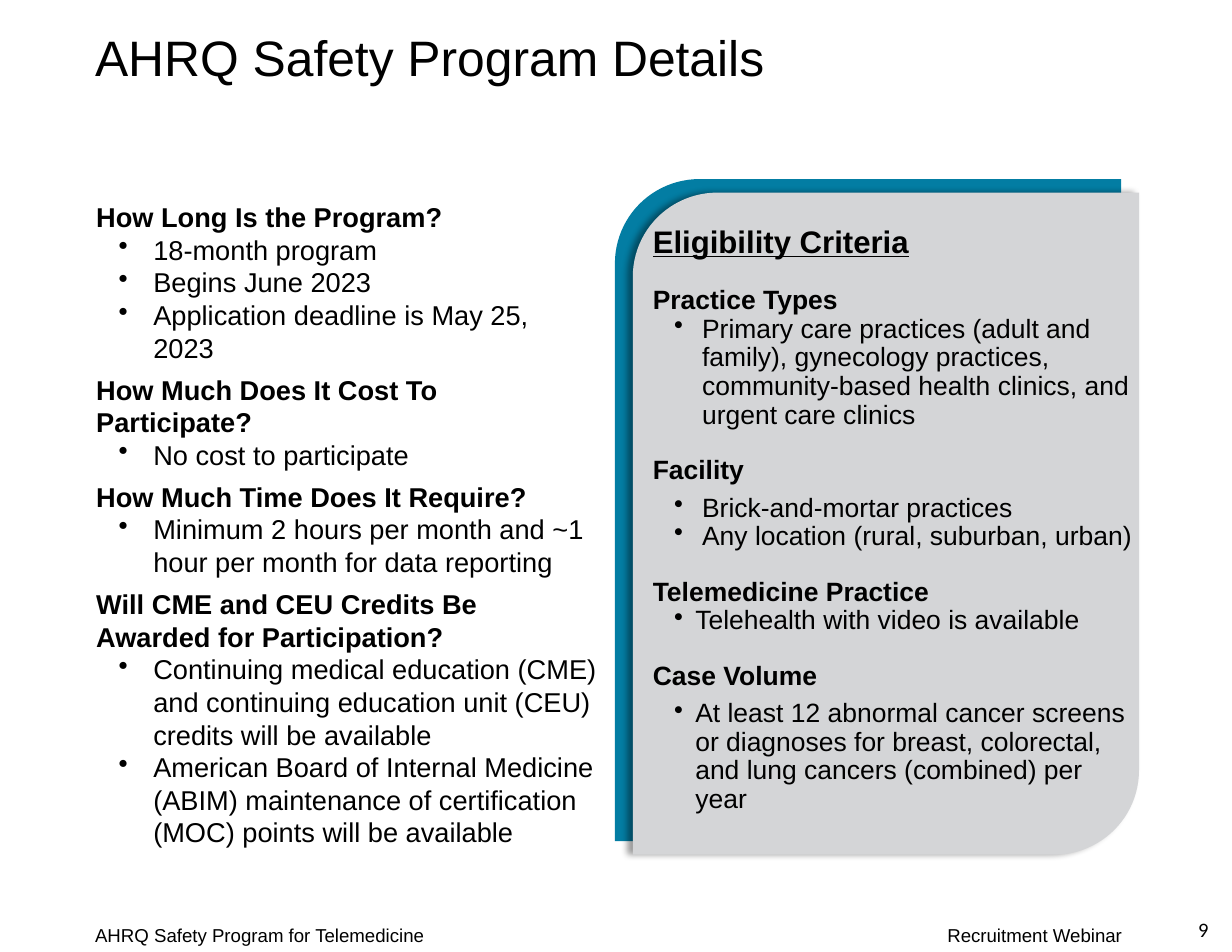
"""Build the AHRQ Safety Program Details slide."""
from lxml import etree
from pptx import Presentation
from pptx.dml.color import RGBColor
from pptx.enum.shapes import MSO_SHAPE
from pptx.enum.text import MSO_ANCHOR, PP_ALIGN
from pptx.oxml import parse_xml
from pptx.oxml.ns import nsdecls, qn
from pptx.util import Inches, Pt

CARD = MSO_SHAPE.ROUND_2_DIAG_RECTANGLE
TOP, MIDDLE = MSO_ANCHOR.TOP, MSO_ANCHOR.MIDDLE
LEFT, RIGHT = PP_ALIGN.LEFT, PP_ALIGN.RIGHT
COLORS = {"text": "000000", "teal": "037DA3", "gray": "D4D5D7", "shadow": "000000"}

presentation = Presentation()
presentation.slide_width = Inches(11)
presentation.slide_height = Inches(8.5)
slide = presentation.slides.add_slide(presentation.slide_layouts[6])


def place(left, top, width, height):
    across, down = presentation.slide_width / 100, presentation.slide_height / 100
    return int(left * across), int(top * down), int(width * across), int(height * down)


def add_text(frame, text, size, font="Arial", bold=False, underline=False, align=LEFT,
             spacing=None, before=0, after=0, margin=0, hanging=0):
    paragraph = frame.paragraphs[0]
    if paragraph.runs:
        paragraph = frame.add_paragraph()
    paragraph.alignment = align
    paragraph.line_spacing = spacing
    paragraph.space_before, paragraph.space_after = Pt(before), Pt(after)
    if margin:
        properties = paragraph._p.get_or_add_pPr()
        properties.set("marL", str(Inches(margin)))
        properties.set("indent", str(-Inches(hanging)))
        etree.SubElement(properties, qn("a:buChar")).set("char", "•")
    run = paragraph.add_run()
    run.text = text
    run.font.name, run.font.size = font, Pt(size)
    run.font.bold, run.font.underline = bold, underline
    run.font.color.rgb = RGBColor.from_string(COLORS["text"])


for left, top, color in [(49.91, 18.82, "teal"), (51.36, 20.24, "gray")]:
    card = slide.shapes.add_shape(CARD, *place(left, top, 41.09, 69.53))
    card.shadow.inherit = False
    card.fill.solid()
    card.fill.fore_color.rgb = RGBColor.from_string(COLORS[color])
    card.line.fill.background()

effects = card._element.spPr.find(qn("a:effectLst"))
effects.append(parse_xml(
    f'<a:outerShdw {nsdecls("a")} blurRad="{Pt(4)}" dist="{Pt(3)}" dir="{180 * 60000}" '
    f'algn="ctr" rotWithShape="0"><a:srgbClr val="{COLORS["shadow"]}">'
    '<a:alpha val="40000"/></a:srgbClr></a:outerShdw>'))

frames = {}
for name, bounds, anchor in [
    ("title", (6.82, 0, 86.27, 12.71), MIDDLE),
    ("details", (6.91, 20.47, 42.45, 69.53), TOP),
    ("criteria", (52.09, 23.18, 41.09, 66.82), TOP),
    ("program", (6.82, 96.47, 37.82, 3.53), TOP),
    ("event", (76, 96.47, 17.27, 3.53), TOP),
    ("number", (93.18, 95.53, 5.82, 4.24), MIDDLE),
]:
    frames[name] = slide.shapes.add_textbox(*place(*bounds)).text_frame
    frames[name].word_wrap = True
    frames[name].vertical_anchor = anchor

add_text(frames["title"], "AHRQ Safety Program Details", 32, spacing=0.9)
add_text(frames["program"], "AHRQ Safety Program for Telemedicine", 12)
add_text(frames["event"], "Recruitment Webinar", 12)
add_text(frames["number"], "9", 13.2, font="Calibri", align=RIGHT)

questions = {
    "How Long Is the Program?": [
        "18-month program", "Begins June 2023", "Application deadline is May 25, 2023"],
    "How Much Does It Cost To Participate?": ["No cost to participate"],
    "How Much Time Does It Require?": [
        "Minimum 2 hours per month and ~1 hour per month for data reporting"],
    "Will CME and CEU Credits Be Awarded for Participation?": [
        "Continuing medical education (CME) and continuing education unit (CEU) "
        "credits will be available",
        "American Board of Internal Medicine (ABIM) maintenance of certification (MOC) "
        "points will be available"],
}
for question, answers in questions.items():
    add_text(frames["details"], question, 17.5, bold=True)
    for answer in answers:
        add_text(frames["details"], answer, 17.5, margin=0.51, hanging=0.31,
                 after=6 if answer == answers[-1] else 0)

criteria = [
    ("Practice Types", 0.44, 0.25, 0, [
        "Primary care practices (adult and family), gynecology practices, "
        "community-based health clinics, and urgent care clinics"]),
    ("Facility", 0.44, 0.25, 5.5, [
        "Brick-and-mortar practices", "Any location (rural, suburban, urban)"]),
    ("Telemedicine Practice", 0.38, 0.19, 0, ["Telehealth with video is available"]),
    ("Case Volume", 0.38, 0.19, 5.5, [
        "At least 12 abnormal cancer screens or diagnoses for breast, colorectal, "
        "and lung cancers (combined) per year"]),
]
add_text(frames["criteria"], "Eligibility Criteria", 20, bold=True, underline=True,
         spacing=0.9, after=12)
for heading, margin, hanging, gap, items in criteria:
    add_text(frames["criteria"], heading, 17, bold=True, spacing=0.9, before=5.5)
    for item in items:
        add_text(frames["criteria"], item, 17, spacing=0.9, margin=margin, hanging=hanging,
                 before=gap if item == items[0] else 0,
                 after=12 if item == items[-1] else 0)

presentation.save("out.pptx")
